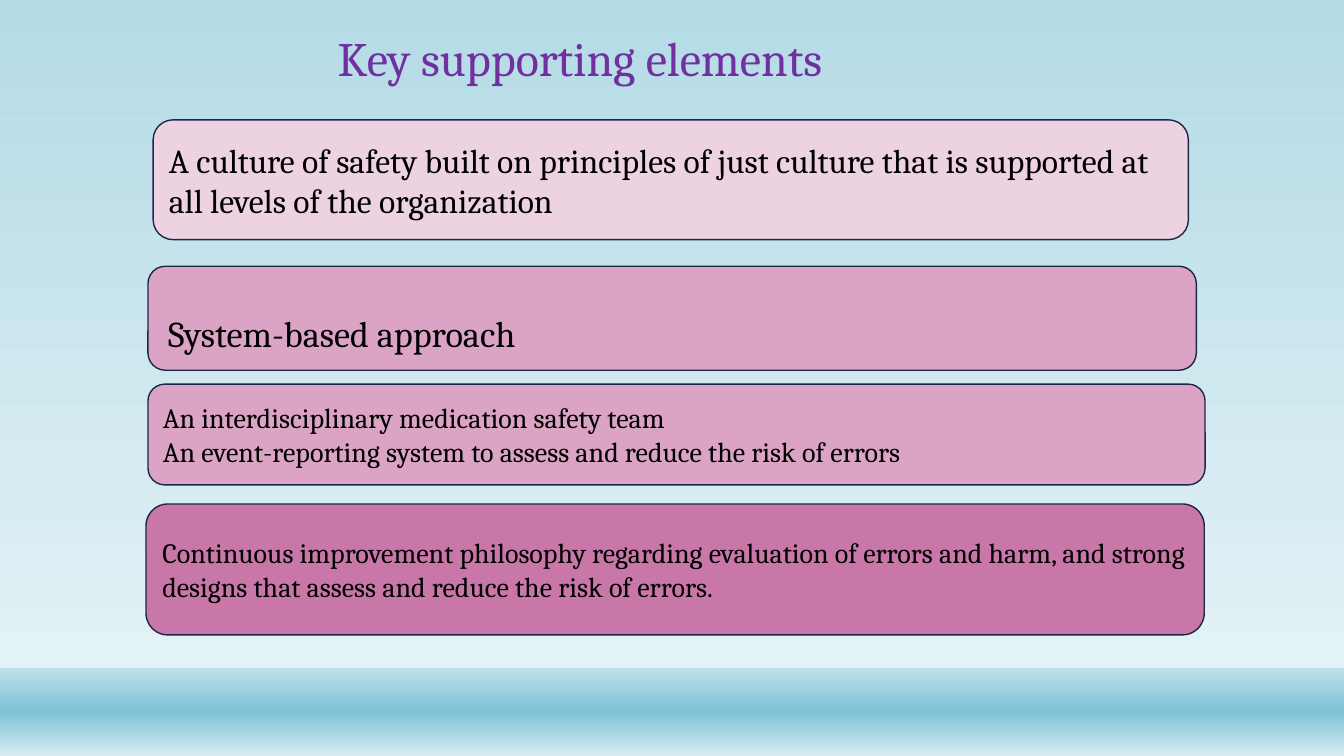
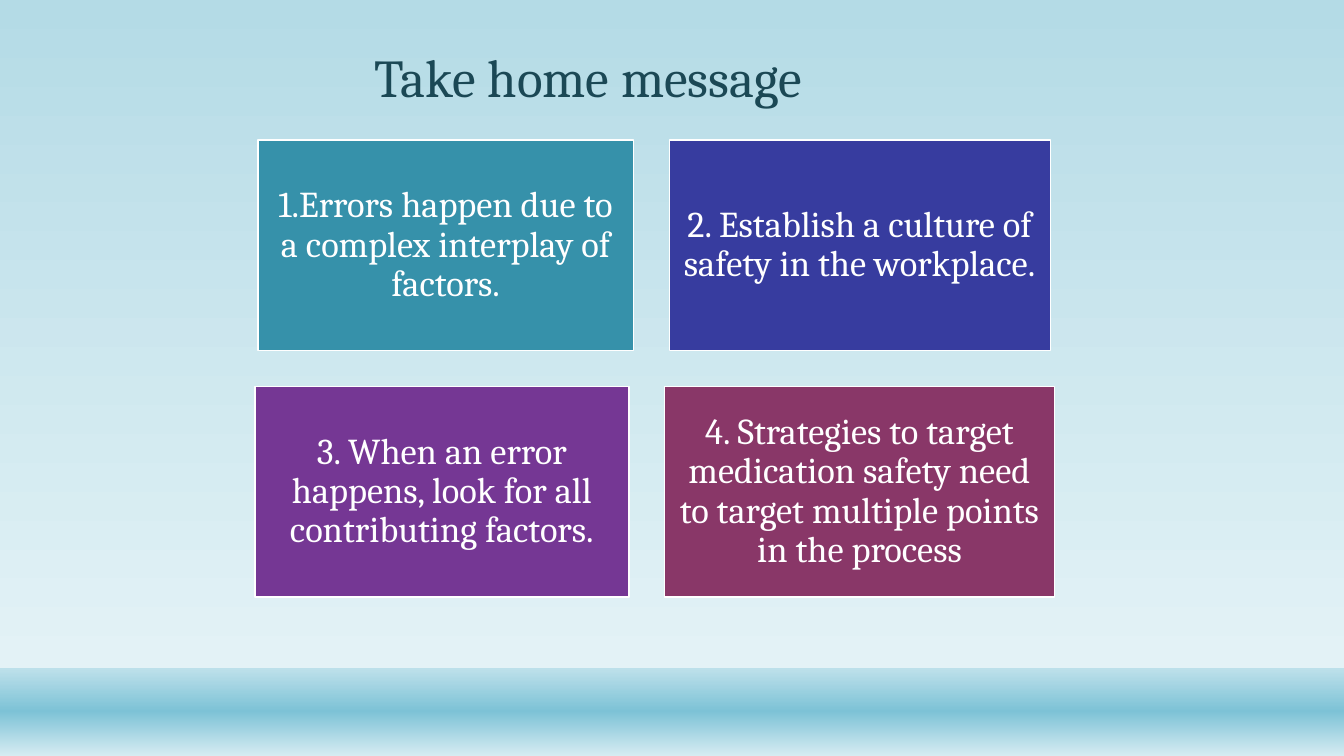
from copy import deepcopy

from pptx import Presentation
from pptx.dml.color import RGBColor
from pptx.enum.shapes import MSO_SHAPE
from pptx.enum.text import MSO_ANCHOR, PP_ALIGN
from pptx.util import Cm, Pt

FONT = "Cambria"
WHITE = "FFFFFF"
BLACK = "000000"
TEAL = "1B4855"
PURPLE = "7030A0"
NAVY = "1E2647"
SLIDE_WIDTH = 33.87
SLIDE_HEIGHT = 19.05
BAND_TOP = 16.84
SKY = [(0, "B4DBE6"), (0.88, "E3F2F6")]
BAND = [(0.01, "BCE0EA"), (0.49, "7DC2D6"), (1, "D6ECF2")]

PANELS = [
    (3.86, 3.02, 26.09, 3.02, "EDD2E2", 24,
     ["A culture of safety built on principles of just culture that is supported at "
      "all levels of the organization"]),
    (3.73, 6.71, 26.42, 2.62, "DBA4C5", 25.9, ["System-based approach"]),
    (3.73, 9.68, 26.64, 2.54, "DBA4C5", 20,
     ["An interdisciplinary medication safety team",
      "An event-reporting system to assess and reduce the risk of errors"]),
    (3.68, 12.7, 26.67, 3.3, "C877A8", 20,
     ["Continuous improvement philosophy regarding evaluation of errors and harm, and "
      "strong designs that assess and reduce the risk of errors."]),
]

MESSAGE_TOP = 3.53
MESSAGE_HEIGHT = 5.31
MESSAGE_GAP = 0.9
MESSAGE_ROWS = [
    (6.5, [(9.47, "3691AA", "1.Errors happen due to a complex interplay of factors."),
           (9.6, "373C9F", "2. Establish a culture of safety in the workplace.")]),
    (6.43, [(9.42, "753794", "3. When an error happens, look for all contributing factors."),
            (9.83, "893768",
             "4. Strategies to target medication safety need to target multiple points "
             "in the process")]),
]


def rgb(code):
    return RGBColor.from_string(code)


def fill_downward(fill, colours):
    fill.gradient()
    fill.gradient_angle = 270
    stop_list = fill.gradient_stops[0]._gs.getparent()
    while len(stop_list) < len(colours):
        stop_list.append(deepcopy(stop_list[0]))
    for stop, (position, colour) in zip(fill.gradient_stops, colours):
        stop.position = position
        stop.color.rgb = rgb(colour)


def write(frame, lines, size, colour, align=PP_ALIGN.LEFT, spacing=None):
    frame.word_wrap = True
    frame.vertical_anchor = MSO_ANCHOR.MIDDLE
    frame.text = "\n".join(lines)
    for paragraph in frame.paragraphs:
        paragraph.alignment = align
        paragraph.line_spacing = spacing
        paragraph.font.name = FONT
        paragraph.font.size = Pt(size)
        paragraph.font.color.rgb = rgb(colour)


def add_block(slide, preset, left, top, width, height, colour, outline):
    block = slide.shapes.add_shape(preset, Cm(left), Cm(top), Cm(width), Cm(height))
    block.shadow.inherit = False
    block.fill.solid()
    block.fill.fore_color.rgb = rgb(colour)
    block.line.color.rgb = rgb(outline)
    block.line.width = Pt(1)
    return block.text_frame


def add_slide(deck, title, left, middle, size, colour):
    slide = deck.slides.add_slide(deck.slide_layouts[6])
    band = slide.shapes.add_shape(MSO_SHAPE.RECTANGLE, 0, Cm(BAND_TOP),
                                  Cm(SLIDE_WIDTH), Cm(SLIDE_HEIGHT - BAND_TOP))
    band.shadow.inherit = False
    band.line.fill.background()
    fill_downward(band.fill, BAND)
    heading = slide.shapes.add_textbox(Cm(left), Cm(middle - 1), Cm(16), Cm(2))
    write(heading.text_frame, [title], size, colour, spacing=0.9)
    return slide


def add_elements_slide(deck):
    slide = add_slide(deck, "Key supporting elements", 8.26, 1.53, 34.2, PURPLE)
    for left, top, width, height, colour, size, lines in PANELS:
        frame = add_block(slide, MSO_SHAPE.ROUNDED_RECTANGLE,
                          left, top, width, height, colour, NAVY)
        write(frame, lines, size, BLACK)
        if lines == ["System-based approach"]:
            frame.margin_left = Cm(0.38)
            frame.margin_top = Cm(0.89)


def add_messages_slide(deck):
    slide = add_slide(deck, "Take home message", 9.2, 2.03, 38, TEAL)
    for row, (left, messages) in enumerate(MESSAGE_ROWS):
        top = MESSAGE_TOP + row * (MESSAGE_HEIGHT + MESSAGE_GAP)
        for width, colour, message in messages:
            frame = add_block(slide, MSO_SHAPE.RECTANGLE,
                              left, top, width, MESSAGE_HEIGHT, colour, WHITE)
            frame.margin_left = frame.margin_right = Cm(0.28)
            write(frame, [message], 26, WHITE, PP_ALIGN.CENTER, 0.9)
            left += width + MESSAGE_GAP


def main():
    deck = Presentation()
    deck.slide_width = Cm(SLIDE_WIDTH)
    deck.slide_height = Cm(SLIDE_HEIGHT)
    fill_downward(deck.slide_master.background.fill, SKY)
    add_elements_slide(deck)
    add_messages_slide(deck)
    deck.save("out.pptx")


if __name__ == "__main__":
    main()
